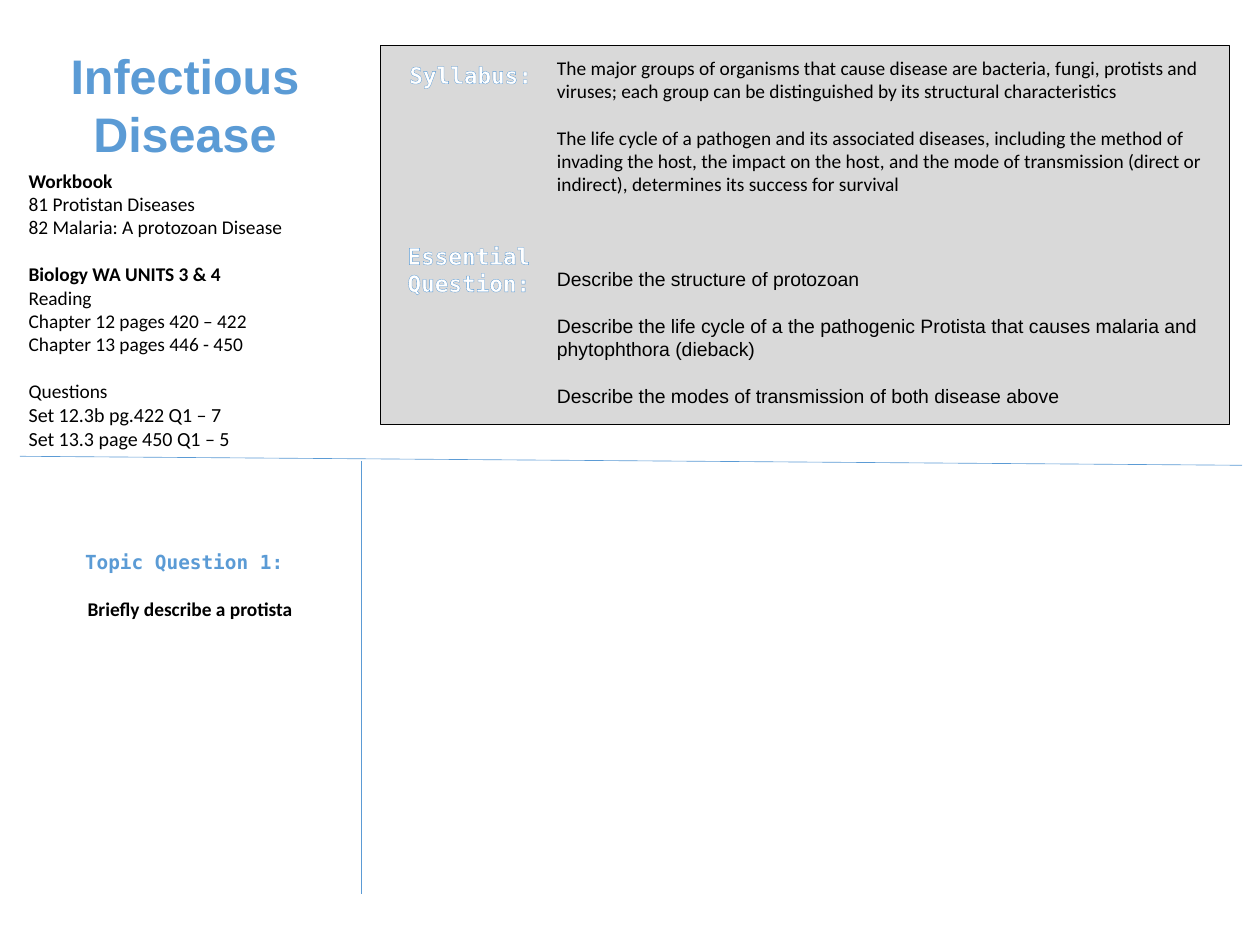
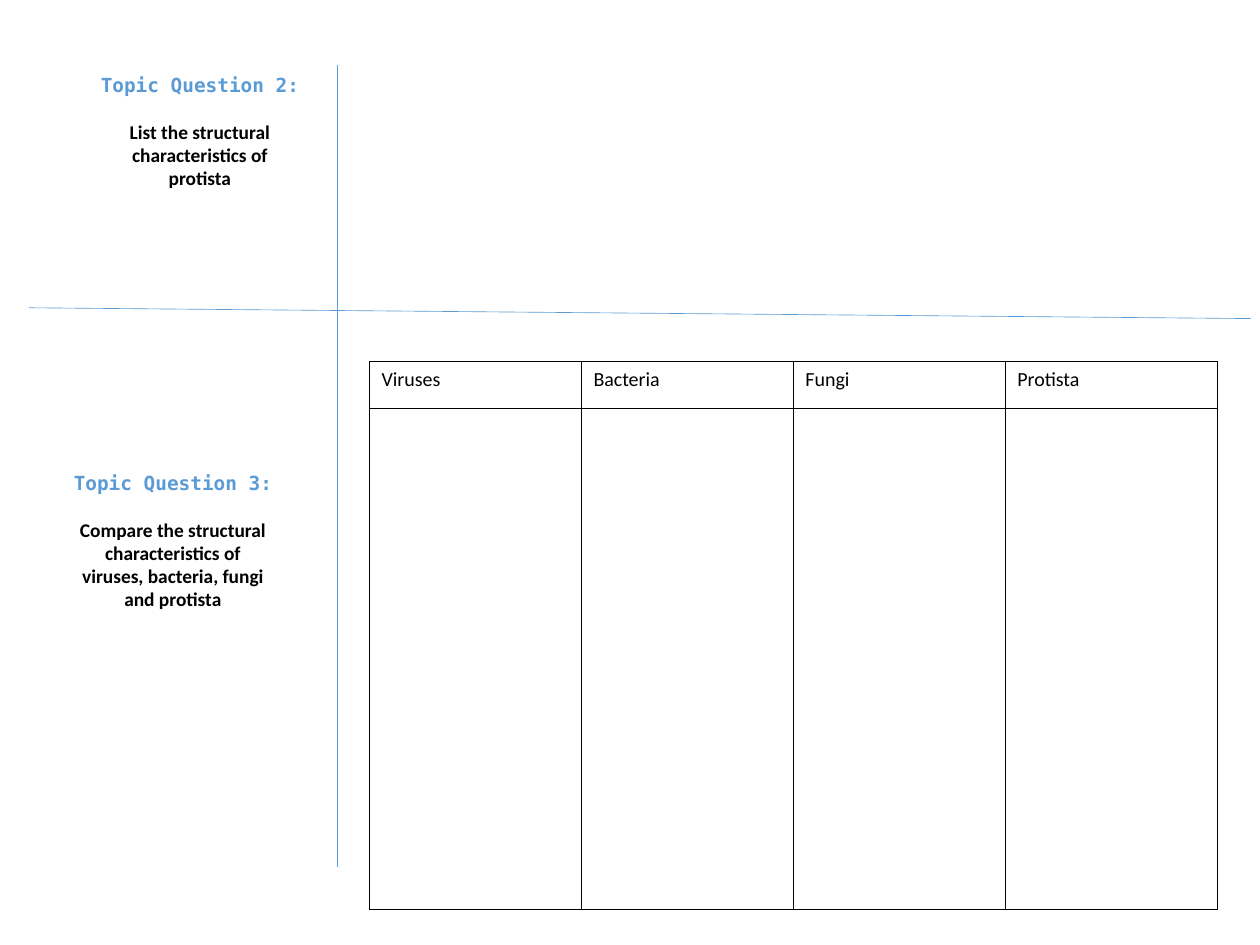
from typing import NamedTuple, Sequence

from lxml.etree import SubElement
from pptx import Presentation
from pptx.dml.color import RGBColor
from pptx.enum.shapes import MSO_CONNECTOR as Connector, MSO_SHAPE as Shape
from pptx.enum.text import MSO_ANCHOR as Anchor, MSO_AUTO_SIZE as AutoSize, PP_ALIGN as Align
from pptx.oxml import parse_xml
from pptx.oxml.ns import nsdecls, qn
from pptx.util import Inches, Pt

COLORS = {"accent": "5B9BD5", "panel": "D9D9D9", "ink": "000000", "paper": "FFFFFF"}
BODY, HEADING, MONO = "Calibri", "Arial", "DejaVu Sans Mono"
BODY_SIZE, GAP = 15.5, 19
WIDE_INSETS = (0.13, 0.06)


class Area(NamedTuple):
    left: float
    top: float
    width: float
    height: float


class Line(NamedTuple):
    text: str
    font: str = BODY
    size: float = BODY_SIZE
    bold: bool = False
    color: str = "ink"
    before: float = 0


class Rule(NamedTuple):
    start: tuple[float, float]
    end: tuple[float, float]


class Topic(NamedTuple):
    number: int
    question: str
    area: Area


READING = [
    Line("Workbook", bold=True),
    Line("81 Protistan Diseases"),
    Line("82 Malaria: A protozoan Disease"),
    Line("Biology WA UNITS 3 & 4", bold=True, before=GAP),
    Line("Reading"),
    Line("Chapter 12 pages 420 – 422"),
    Line("Chapter 13 pages 446 - 450"),
    Line("Questions", before=GAP),
    Line("Set 12.3b pg.422 Q1 – 7", size=16),
    Line("Set 13.3 page 450 Q1 – 5", size=16),
]
SYLLABUS = [
    Line("The major groups of organisms that cause disease are bacteria, fungi, protists "
         "and viruses; each group can be distinguished by its structural characteristics"),
    Line("The life cycle of a pathogen and its associated diseases, including the method of "
         "invading the host, the impact on the host, and the mode of transmission "
         "(direct or indirect), determines its success for survival", before=GAP),
    Line("Describe the structure of protozoan", HEADING, before=3 * GAP),
    Line("Describe the life cycle of a the pathogenic Protista that causes malaria and "
         "phytophthora (dieback)", HEADING, before=GAP),
    Line("Describe the modes of transmission of both disease above", HEADING, before=GAP),
]
LABELS = [
    (Area(4.43, 2.64, 1.57, 0.71), ["Essential", "Question:"]),
    (Area(4.45, 0.63, 1.57, 0.41), ["Syllabus:"]),
]
FIRST_RULES = [Rule((4.01, 5.12), (4.01, 9.93)), Rule((0.22, 5.07), (13.8, 5.17))]
SECOND_RULES = [Rule((3.75, 0.72), (3.75, 9.63)), Rule((0.32, 3.42), (13.9, 3.54))]
FIRST_TOPIC = Topic(1, "Briefly describe a protista", Area(0.31, 6.05, 3.6, 1.2))
SECOND_TOPICS = [
    Topic(3, "Compare the structural characteristics of viruses, bacteria, fungi and protista",
          Area(0.68, 5.17, 2.48, 1.68)),
    Topic(2, "List the structural characteristics of protista", Area(0.98, 0.75, 2.48, 1.45)),
]
GROUPS = ["Viruses", "Bacteria", "Fungi", "Protista"]
TABLE_AREA = Area(4.11, 4.02, 9.42, 6.09)
HEADER_HEIGHT = 0.52


def rgb(name: str) -> RGBColor:
    return RGBColor.from_string(COLORS[name])


def inches(area: Area) -> list[Inches]:
    return [Inches(value) for value in area]


def set_insets(target, insets: tuple[float, float]) -> None:
    target.margin_left = target.margin_right = Inches(insets[0])
    target.margin_top = target.margin_bottom = Inches(insets[1])


def write_lines(frame, lines: Sequence[Line], align=Align.LEFT) -> None:
    frame.text = "\n".join(line.text for line in lines)
    for para, line in zip(frame.paragraphs, lines):
        para.alignment = align
        para.space_before = Pt(line.before)
        for span in para.runs:
            span.font.name = line.font
            span.font.size = Pt(line.size)
            span.font.bold = line.bold
            span.font.color.rgb = rgb(line.color)


def add_text(page, area: Area, lines: Sequence[Line], align=Align.LEFT,
             insets: tuple[float, float] = (0.1, 0.05), wrap: bool = True):
    box = page.shapes.add_textbox(*inches(area))
    frame = box.text_frame
    frame.word_wrap = wrap
    set_insets(frame, insets)
    write_lines(frame, lines, align)
    return box


def add_label(page, area: Area, words: Sequence[str]) -> None:
    lines = [Line(word, MONO, 18.1, True, "paper") for word in words]
    box = add_text(page, area, lines, wrap=False)
    for para in box.text_frame.paragraphs:
        for span in para.runs:
            span.font._element.insert(0, parse_xml(
                f'<a:ln {nsdecls("a")} w="10160"><a:solidFill>'
                f'<a:srgbClr val="{COLORS["accent"]}"/></a:solidFill></a:ln>'))


def add_topic(page, topic: Topic) -> None:
    lines = [Line(f"Topic Question {topic.number}: ", MONO, bold=True, color="accent"),
             Line(topic.question, bold=True, before=GAP)]
    add_text(page, topic.area, lines, Align.CENTER, WIDE_INSETS)


def add_rule(page, rule: Rule) -> None:
    ends = [Inches(value) for value in rule.start + rule.end]
    connector = page.shapes.add_connector(Connector.STRAIGHT, *ends)
    connector.line.color.rgb = rgb("accent")
    connector.line.width = Pt(0.5)
    SubElement(connector._element.spPr, qn("a:effectLst"))


def add_panel(page, area: Area) -> None:
    panel = page.shapes.add_shape(Shape.RECTANGLE, *inches(area))
    panel.shadow.inherit = False
    panel.fill.solid()
    panel.fill.fore_color.rgb = rgb("panel")
    panel.line.color.rgb = rgb("ink")
    panel.line.width = Pt(0.5)


def format_cell(cell) -> None:
    set_insets(cell, WIDE_INSETS)
    properties = cell._tc.get_or_add_tcPr()
    for side in ("lnL", "lnR", "lnT", "lnB"):
        properties.append(parse_xml(
            f'<a:{side} {nsdecls("a")} w="12700"><a:solidFill>'
            f'<a:srgbClr val="{COLORS["ink"]}"/></a:solidFill></a:{side}>'))
    cell.fill.background()


def add_comparison(page, area: Area) -> None:
    table = page.shapes.add_table(2, len(GROUPS), *inches(area)).table
    table.first_row = table.horz_banding = False
    table.rows[0].height = Inches(HEADER_HEIGHT)
    table.rows[1].height = Inches(area.height - HEADER_HEIGHT)
    for column, group in zip(table.columns, GROUPS):
        column.width = Inches(area.width / len(GROUPS))
    for cell in table.iter_cells():
        format_cell(cell)
    for cell, group in zip(table.rows[0].cells, GROUPS):
        write_lines(cell.text_frame, [Line(group, size=16)])


def set_title(page, text: str, area: Area) -> None:
    title = page.shapes.title
    title.left, title.top, title.width, title.height = inches(area)
    frame = title.text_frame
    frame.word_wrap = True
    frame.auto_size = AutoSize.NONE
    frame.vertical_anchor = Anchor.TOP
    set_insets(frame, WIDE_INSETS)
    write_lines(frame, [Line(text, HEADING, 38.8, True, "accent")], Align.CENTER)


def build_overview(deck) -> None:
    page = deck.slides.add_slide(deck.slide_layouts[5])
    set_title(page, "Infectious Disease", Area(-0.05, 0.45, 4.21, 1.11))
    for rule in FIRST_RULES:
        add_rule(page, rule)
    add_panel(page, Area(4.23, 0.5, 9.43, 4.21))
    for area, words in LABELS:
        add_label(page, area, words)
    add_text(page, Area(6.09, 0.57, 7.91, 1.72), SYLLABUS)
    add_text(page, Area(0.22, 1.83, 3.67, 4.03), READING)
    add_topic(page, FIRST_TOPIC)


def build_structures(deck) -> None:
    page = deck.slides.add_slide(deck.slide_layouts[6])
    for rule in SECOND_RULES:
        add_rule(page, rule)
    for topic in SECOND_TOPICS:
        add_topic(page, topic)
    add_comparison(page, TABLE_AREA)


def main() -> None:
    deck = Presentation()
    deck.slide_width, deck.slide_height = Inches(14), Inches(10.5)
    build_overview(deck)
    build_structures(deck)
    deck.save("out.pptx")


if __name__ == "__main__":
    main()
